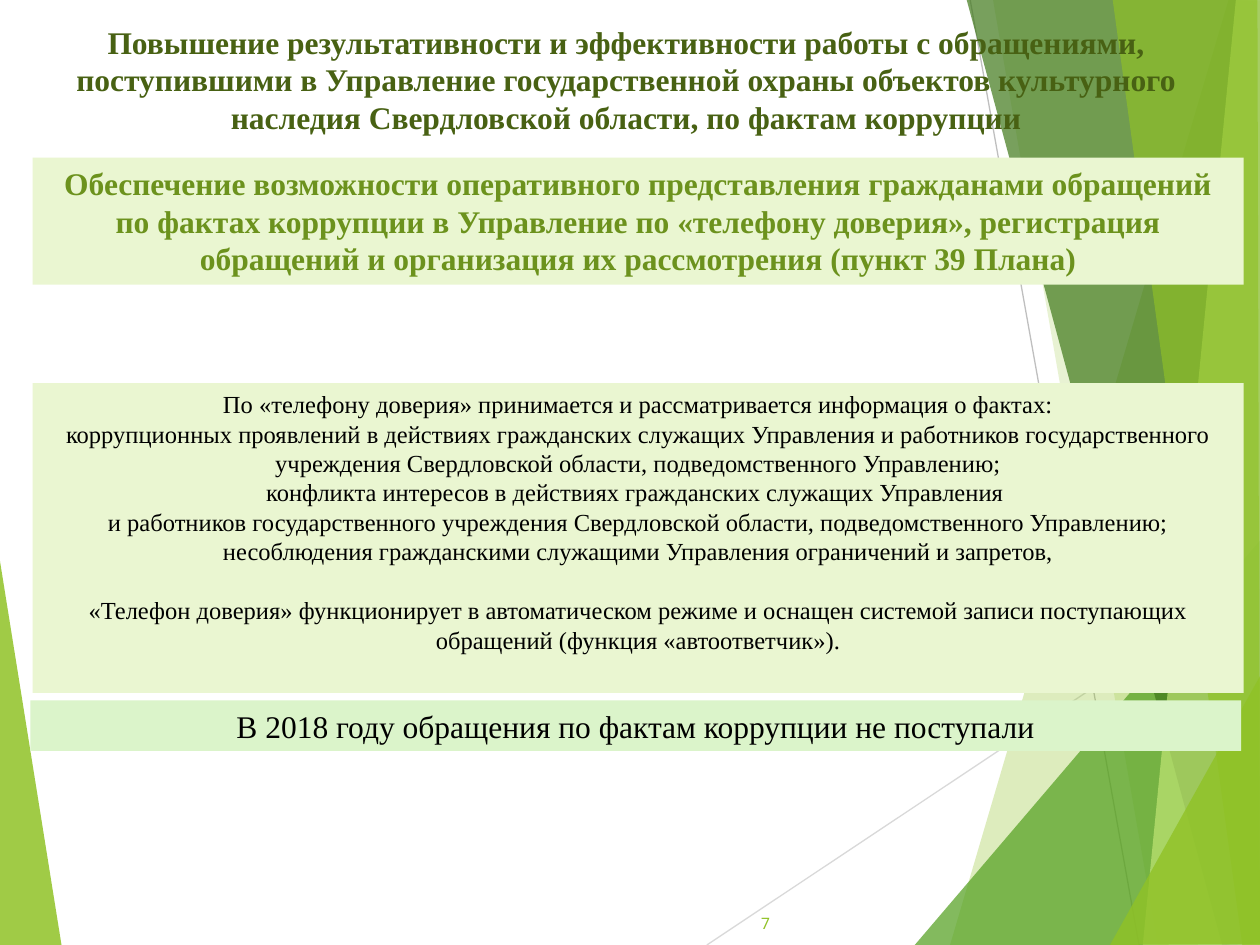
"""Build the slide about handling corruption reports received by the helpline."""
from lxml.etree import SubElement
from pptx import Presentation
from pptx.dml.color import RGBColor
from pptx.enum.shapes import MSO_CONNECTOR, MSO_SHAPE
from pptx.enum.text import MSO_ANCHOR, PP_ALIGN
from pptx.oxml.ns import qn
from pptx.util import Inches, Pt

COLORS = {
    "lime": "90C226", "green": "54A021", "forest": "3F7819", "pale_lime": "C0E474",
    "light_gray": "D9D9D9", "gray": "BFBFBF", "panel": "EAF6D1", "result": "DBF4CA",
    "title": "486113", "heading": "6C921D", "black": "000000",
}
SERIF = "Times New Roman"
COLUMNS, ROWS = 1000, 750
CELL = Inches(0.01)

presentation = Presentation()
presentation.slide_width = COLUMNS * CELL
presentation.slide_height = ROWS * CELL
slide = presentation.slides.add_slide(presentation.slide_layouts[6])


def paint(shape, color):
    shape.shadow.inherit = False
    shape.fill.solid()
    shape.fill.fore_color.rgb = RGBColor.from_string(COLORS[color])
    shape.line.fill.background()


def write(shape, paragraphs, size, color, bold=False, font=SERIF, align=PP_ALIGN.CENTER, anchor=MSO_ANCHOR.TOP):
    text_frame = shape.text_frame
    text_frame.word_wrap = True
    text_frame.vertical_anchor = anchor
    for index, text in enumerate(paragraphs):
        paragraph = text_frame.add_paragraph() if index else text_frame.paragraphs[0]
        paragraph.text = text
        paragraph.alignment = align
        for run in paragraph.runs:
            run.font.name = font
            run.font.size = Pt(size)
            run.font.bold = bold
            run.font.color.rgb = RGBColor.from_string(COLORS[color])


left_facet = ("lime", 85, [(-1, 439), (49, 751), (-1, 750)])
right_facets = [
    ("lime", 30, [(975, 0), (754, 750), (1002, 751), (1001, 1)]),
    ("lime", 20, [(788, -1), (919, 750), (1001, 750), (1001, -1)]),
    ("green", 72, [(726, 750), (1000, 429), (1001, 750)]),
    ("forest", 70, [(767, -1), (970, 750), (1001, 749), (1001, -1)]),
    ("pale_lime", 70, [(981, -1), (907, 750), (1001, 750), (1000, -1)]),
    ("lime", 65, [(883, -1), (986, 750), (1000, 750), (998, -1)]),
    ("lime", 80, [(881, 750), (1001, 535), (1001, 749)]),
]
rays = [("light_gray", (561, 750, 1001, 457)), ("gray", (770, 0, 904, 750))]

for color, ends in rays:
    ray = slide.shapes.add_connector(MSO_CONNECTOR.STRAIGHT, *(end * CELL for end in ends))
    ray.line.color.rgb = RGBColor.from_string(COLORS[color])
    ray.line.width = Pt(0.75)
    SubElement(ray._element.spPr, qn("a:effectLst"))

for color, opacity, points in [left_facet, *right_facets]:
    builder = slide.shapes.build_freeform(*points[0], scale=CELL)
    builder.add_line_segments(points[1:], close=True)
    facet = builder.convert_to_shape()
    paint(facet, color)
    color_element = facet._element.spPr.find(qn("a:solidFill"))[0]
    SubElement(color_element, qn("a:alpha"), val=str(opacity * 1000))

panels = [
    ((26, 125, 961, 101), "panel", 18, "heading", True, [
        "Обеспечение возможности оперативного представления гражданами обращений по фактах коррупции "
        "в Управление по «телефону доверия», регистрация обращений и организация их рассмотрения "
        "(пункт 39 Плана)",
    ]),
    ((26, 304, 961, 246), "panel", 14, "black", False, [
        "По «телефону доверия» принимается и рассматривается информация о фактах:",
        "коррупционных проявлений в действиях гражданских служащих Управления и работников "
        "государственного учреждения Свердловской области, подведомственного Управлению;",
        "конфликта интересов в действиях гражданских служащих Управления \n"
        "и работников государственного учреждения Свердловской области, подведомственного Управлению;",
        "несоблюдения гражданскими служащими Управления ограничений и запретов,",
        "«Телефон доверия» функционирует в автоматическом режиме и оснащен системой записи "
        "поступающих обращений (функция «автоответчик»).",
    ]),
    ((24, 556, 961, 40), "result", 18, "black", False, [
        "В 2018 году обращения по фактам коррупции не поступали",
    ]),
]
for box, fill, size, color, bold, paragraphs in panels:
    panel = slide.shapes.add_shape(MSO_SHAPE.RECTANGLE, *(length * CELL for length in box))
    paint(panel, fill)
    write(panel, paragraphs, size, color, bold)
    if len(paragraphs) > 1:
        panel.text_frame.paragraphs[-1].space_before = Pt(16.8)

title = slide.shapes.add_textbox(*(length * CELL for length in (-3, 13, 1000, 101)))
write(title, [
    "Повышение результативности и эффективности работы с обращениями, поступившими в Управление "
    "государственной охраны объектов культурного наследия Свердловской области, по фактам коррупции",
], 18, "title", bold=True)

page_number = slide.shapes.add_textbox(*(length * CELL for length in (421, 713, 200, 40)))
write(page_number, ["7"], 9, "lime", font="Roboto", align=PP_ALIGN.RIGHT, anchor=MSO_ANCHOR.MIDDLE)

presentation.save("out.pptx")
